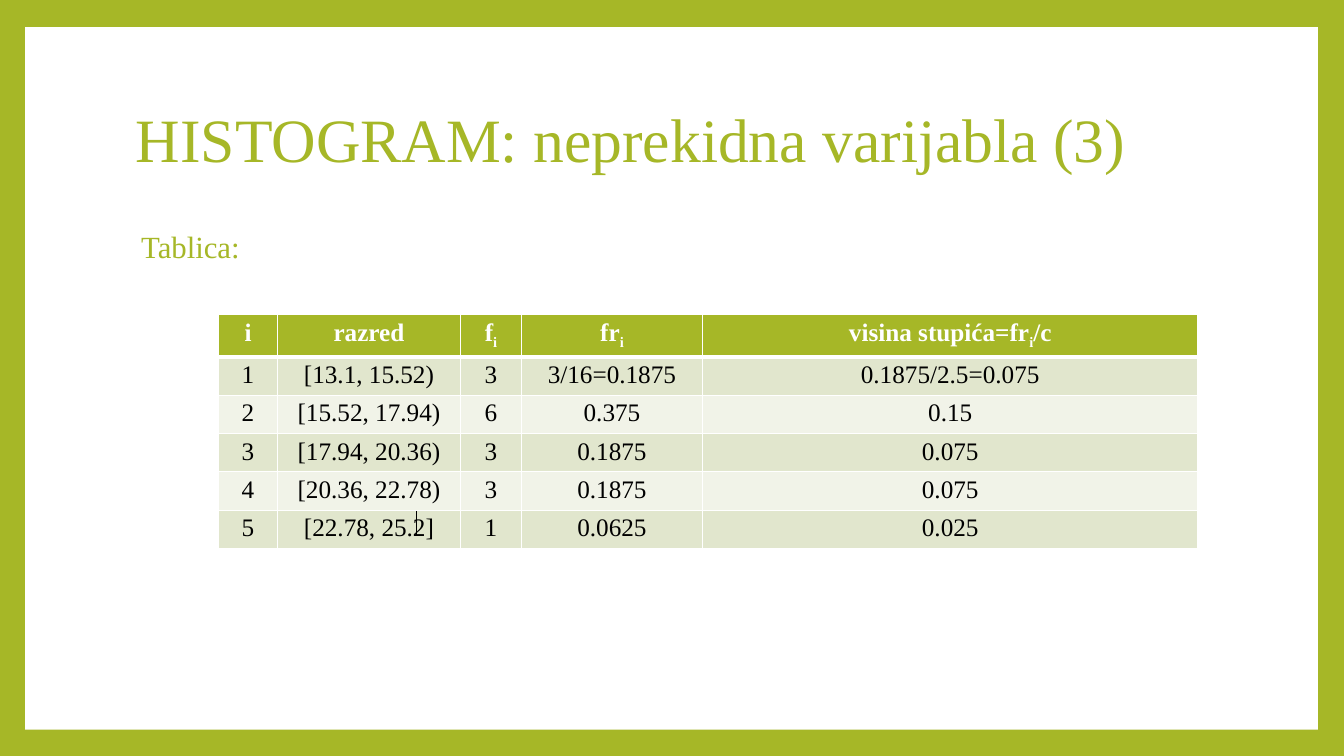
"""Build the slide with the frequency table of a continuous variable."""
from lxml import etree
from pptx import Presentation
from pptx import util as u
from pptx.dml.color import RGBColor
from pptx.enum import shapes, text
from pptx.oxml.ns import qn

TITLE = "HISTOGRAM: neprekidna varijabla (3)"
CAPTION = "Tablica:"
HEADINGS = [("i",), ("razred",), ("f", "i"), ("fr", "i"), ("visina stupića=fr", "i", "/c")]
CLASSES = [
    ("1", "[13.1, 15.52)", "3", "3/16=0.1875", "0.1875/2.5=0.075"),
    ("2", "[15.52, 17.94)", "6", "0.375", "0.15"),
    ("3", "[17.94, 20.36)", "3", "0.1875", "0.075"),
    ("4", "[20.36, 22.78)", "3", "0.1875", "0.075"),
    ("5", "[22.78, 25.2]", "1", "0.0625", "0.025"),
]

GREEN = RGBColor(0xA6, 0xB7, 0x27)
SAGE = RGBColor(0xE1, 0xE6, 0xCD)
MIST = RGBColor(0xF1, 0xF3, 0xE8)
WHITE = RGBColor(0xFF, 0xFF, 0xFF)
BLACK = RGBColor(0, 0, 0)
FONT = "Times New Roman"

WIDTH, HEIGHT = 13.33, 7.5
PANEL = (0.25, 0.27, 12.82, 6.97)
LEFT, CONTENT_WIDTH = 1.25, 10.8
TABLE_LEFT, TABLE_TOP = 2.17, 3.12
COLUMNS = [0.58, 1.82, 0.6, 1.8, 4.91]
ROWS = [0.4] + [0.38] * len(CLASSES)
CURSOR = (4.13, 5.07, 4.13, 5.32)


def inches(*lengths):
    return [u.Inches(length) for length in lengths]


def style(run, size, color, bold=False):
    run.font.name = FONT
    run.font.size = u.Pt(size)
    run.font.color.rgb = color
    run.font.bold = bold


def add_line(slide, words, top, height, size, anchor, indent=0):
    box = slide.shapes.add_textbox(*inches(LEFT, top, CONTENT_WIDTH, height))
    frame = box.text_frame
    frame.word_wrap = True
    frame.vertical_anchor = anchor
    frame.margin_left = u.Inches(0.1 + indent)
    frame.text = words
    frame.paragraphs[0].line_spacing = 0.9
    style(frame.paragraphs[0].runs[0], size, GREEN)


def add_borders(cell, bottom):
    properties = cell._tc.get_or_add_tcPr()
    for place, (side, points) in enumerate([("L", 1), ("R", 1), ("T", 1), ("B", bottom)]):
        border = etree.Element(qn(f"a:ln{side}"), w=str(u.Pt(points)))
        fill = etree.SubElement(border, qn("a:solidFill"))
        etree.SubElement(fill, qn("a:srgbClr"), val=str(WHITE))
        properties.insert(place, border)


def fill_cell(cell, parts, fill, color, heading):
    cell.fill.solid()
    cell.fill.fore_color.rgb = fill
    cell.margin_top = cell.margin_bottom = u.Inches(0.04)
    paragraph = cell.text_frame.paragraphs[0]
    paragraph.alignment = text.PP_ALIGN.CENTER
    for place, part in enumerate(parts):
        run = paragraph.add_run()
        run.text = part
        style(run, 18, color, heading)
        if place == 1:
            run.font._element.set("baseline", "-25000")
    add_borders(cell, 3 if heading else 1)


def add_frequencies(slide):
    lines = [HEADINGS] + [[(value,) for value in values] for values in CLASSES]
    area = inches(TABLE_LEFT, TABLE_TOP, sum(COLUMNS), sum(ROWS))
    table = slide.shapes.add_table(len(ROWS), len(COLUMNS), *area).table
    for column, width in zip(table.columns, COLUMNS):
        column.width = u.Inches(width)
    for row, height in zip(table.rows, ROWS):
        row.height = u.Inches(height)
    for r, line in enumerate(lines):
        heading = r == 0
        fill = GREEN if heading else SAGE if r % 2 else MIST
        for c, parts in enumerate(line):
            fill_cell(table.cell(r, c), parts, fill, WHITE if heading else BLACK, heading)


def main():
    deck = Presentation()
    deck.slide_width, deck.slide_height = inches(WIDTH, HEIGHT)
    slide = deck.slides.add_slide(deck.slide_layouts[6])
    slide.background.fill.solid()
    slide.background.fill.fore_color.rgb = GREEN

    panel = slide.shapes.add_shape(shapes.MSO_SHAPE.RECTANGLE, *inches(*PANEL))
    panel.shadow.inherit = False
    panel.fill.solid()
    panel.fill.fore_color.rgb = WHITE
    panel.line.fill.background()

    add_line(slide, TITLE, 0.67, 1.48, 44, text.MSO_ANCHOR.MIDDLE)
    add_line(slide, CAPTION, 2.25, 4.42, 22, text.MSO_ANCHOR.TOP, indent=0.05)
    add_frequencies(slide)

    cursor = slide.shapes.add_connector(shapes.MSO_CONNECTOR.STRAIGHT, *inches(*CURSOR))
    cursor.line.color.rgb = BLACK
    cursor.line.width = u.Pt(0.79)
    etree.SubElement(cursor._element.spPr, qn("a:effectLst"))

    deck.save("out.pptx")


if __name__ == "__main__":
    main()
